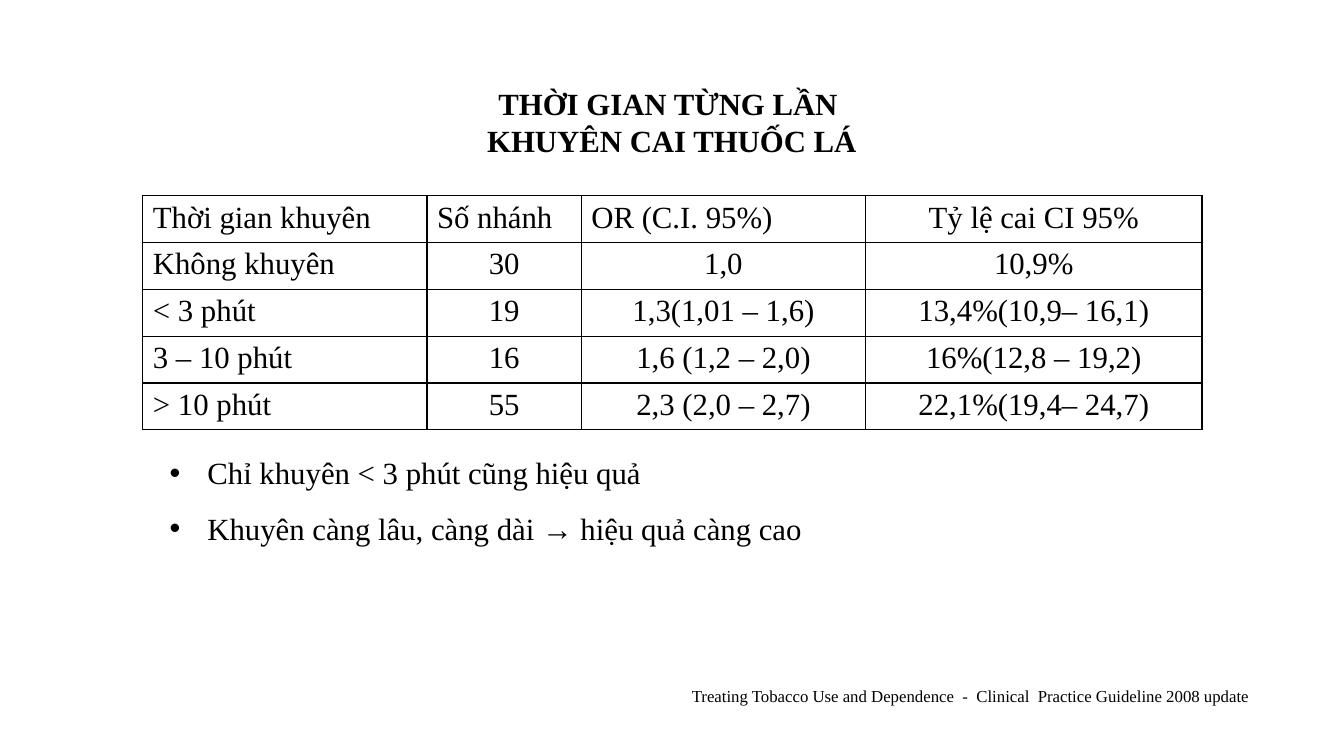
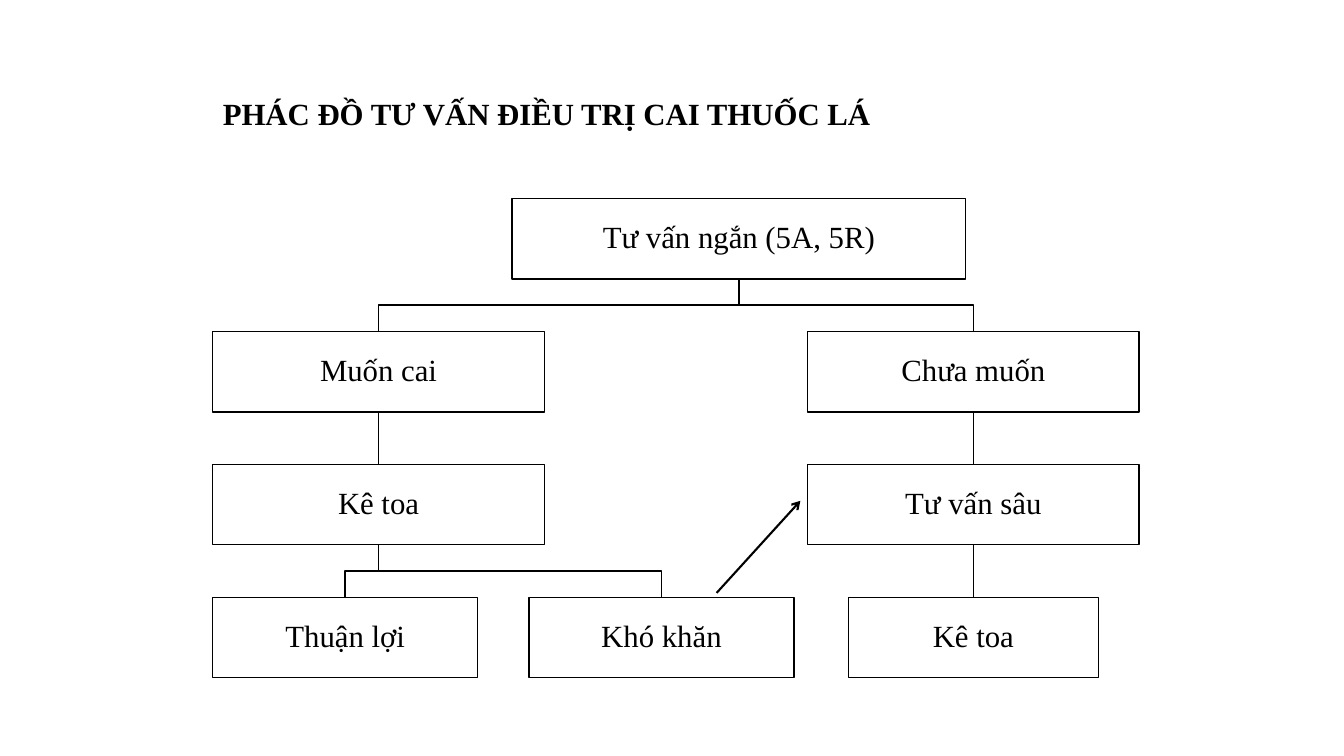
from dataclasses import dataclass

from lxml import etree
from pptx import Presentation
from pptx import util as u
from pptx.dml.color import RGBColor
from pptx.enum import shapes, text
from pptx.oxml import ns

Cm, Pt = u.Cm, u.Pt
LEFT, CENTER = text.PP_ALIGN.LEFT, text.PP_ALIGN.CENTER
RIGHT, JUSTIFY = text.PP_ALIGN.RIGHT, text.PP_ALIGN.JUSTIFY
TOP, MIDDLE = text.MSO_ANCHOR.TOP, text.MSO_ANCHOR.MIDDLE


@dataclass(frozen=True)
class Theme:
    ink: RGBColor = RGBColor(0, 0, 0)
    font: str = "Times New Roman"
    main: int = 22
    small: int = 12
    thin: float = 1
    thick: float = 1.5


class Deck:
    """Holds the style and the current slide."""

    def __init__(self, theme):
        self.theme = theme
        self.prs = Presentation()
        self.prs.slide_width, self.prs.slide_height = Cm(33.87), Cm(19.05)
        self.s = None

    def new_slide(self, layout):
        self.s = self.prs.slides.add_slide(self.prs.slide_layouts[layout])

    def fill_text(self, tf, content, align, spacing=1.0, size=None, bold=False):
        tf.text = content
        for p in tf.paragraphs:
            p.alignment, p.line_spacing = align, spacing
            p.space_before = p.space_after = Pt(0)
            for r in p.runs:
                f = r.font
                f.name, f.size, f.bold = self.theme.font, Pt(size or self.theme.main), bold
                f.color.rgb = self.theme.ink

    def place(self, sp, box, anchor):
        sp.left, sp.top, sp.width, sp.height = (Cm(v) for v in box)
        tf = sp.text_frame
        tf.word_wrap, tf.auto_size = True, text.MSO_AUTO_SIZE.NONE
        tf.vertical_anchor = anchor
        return tf

    def title(self, content, box, align, anchor, spacing=1.0):
        tf = self.place(self.s.shapes.title, box, anchor)
        self.fill_text(tf, content, align, spacing, bold=True)

    def bullets(self, items, box):
        tf = self.place(self.s.placeholders[1], box, TOP)
        self.fill_text(tf, "\n".join(items), JUSTIFY, 1.5)

    def source(self, content, box):
        sp = self.s.shapes.add_textbox(*(Cm(v) for v in box))
        self.fill_text(self.place(sp, box, TOP), content, RIGHT, size=self.theme.small)

    def border(self, cell):
        tc_pr = cell._tc.get_or_add_tcPr()
        for side in ("lnL", "lnR", "lnT", "lnB"):
            ln = etree.SubElement(tc_pr, ns.qn(f"a:{side}"), w=str(Pt(self.theme.thin)))
            fill = etree.SubElement(ln, ns.qn("a:solidFill"))
            etree.SubElement(fill, ns.qn("a:srgbClr"), val=str(self.theme.ink))

    def table(self, rows, left, top, widths, row_height):
        frame = self.s.shapes.add_table(len(rows), len(widths), Cm(left), Cm(top),
                                        Cm(sum(widths)), Cm(row_height * len(rows)))
        tbl = frame.table
        tbl.first_row = tbl.horz_banding = False
        for col, width in zip(tbl.columns, widths):
            col.width = Cm(width)
        last = len(widths) - 1
        for i, row in enumerate(rows):
            tbl.rows[i].height = Cm(row_height)
            for j, value in enumerate(row):
                cell = tbl.cell(i, j)
                centred = j == last or (i > 0 and j > 0)
                self.fill_text(cell.text_frame, value, CENTER if centred else LEFT)
                self.border(cell)
                cell.fill.background()

    def outline(self, sp, width):
        sp.line.color.rgb, sp.line.width = self.theme.ink, Pt(width)

    def box(self, content, centre, top, width, height):
        place = (centre - width / 2, top, width, height)
        sp = self.s.shapes.add_shape(shapes.MSO_SHAPE.RECTANGLE, *(Cm(v) for v in place))
        sp.shadow.inherit = False
        sp.fill.background()
        self.outline(sp, self.theme.thin)
        tf = self.place(sp, place, MIDDLE)
        tf.margin_left = tf.margin_right = tf.margin_top = tf.margin_bottom = Cm(0.05)
        self.fill_text(tf, content, CENTER, 0.9)
        return sp

    def line(self, start=(0, 0), end=(0, 0), width=None):
        c = self.s.shapes.add_connector(shapes.MSO_CONNECTOR.STRAIGHT,
                                        *(Cm(v) for v in (*start, *end)))
        self.outline(c, width or self.theme.thin)
        etree.SubElement(c._element.spPr, ns.qn("a:effectLst"))
        return c

    def arrow(self, start, end):
        c = self.line(start, end, self.theme.thick)
        etree.SubElement(c._element.spPr.get_or_add_ln(), ns.qn("a:tailEnd"), type="arrow")

    def link(self, parent, child):
        c = self.line()
        c.begin_connect(parent, 2)
        c.end_connect(child, 0)

    def branch(self, parent, child):
        x1, y1 = parent.left + parent.width // 2, parent.top + parent.height
        x2, y2 = child.left + child.width // 2, child.top
        mid = (y1 + y2) // 2
        fb = self.s.shapes.build_freeform(x1, y1)
        fb.add_line_segments([(x1, mid), (x2, mid), (x2, y2)], close=False)
        sp = fb.convert_to_shape()
        sp.shadow.inherit = False
        sp.fill.background()
        self.outline(sp, self.theme.thin)


def advice_time(d):
    d.new_slide(1)
    d.title("THỜI GIAN TỪNG LẦN \nKHUYÊN CAI THUỐC LÁ", (5.5, 2, 22.86, 2.97), CENTER, TOP)
    d.table([
        ("Thời gian khuyên", "Số nhánh", "OR (C.I. 95%)", "Tỷ lệ cai CI 95%"),
        ("Không khuyên", "30", "1,0", "10,9%"),
        ("< 3 phút", "19", "1,3(1,01 – 1,6)", "13,4%(10,9– 16,1)"),
        ("3 – 10 phút", "16", "1,6 (1,2 – 2,0)", "16%(12,8 – 19,2)"),
        ("> 10 phút", "55", "2,3 (2,0 – 2,7)", "22,1%(19,4– 24,7)"),
    ], 3.6, 4.93, (7.16, 3.89, 7.16, 8.48), 1.18)
    d.bullets(["Chỉ khuyên < 3 phút cũng hiệu quả",
               "Khuyên càng lâu, càng dài → hiệu quả càng cao"], (4.02, 10.85, 23.7, 4))
    d.source("Treating Tobacco Use and Dependence  -  Clinical  Practice Guideline 2008 update",
             (4.65, 17.15, 27.1, 0.76))


def counselling_chart(d):
    d.new_slide(5)
    d.title("PHÁC ĐỒ TƯ VẤN ĐIỀU TRỊ CAI THUỐC LÁ", (5.36, 1.07, 16.94, 3.68), LEFT, MIDDLE, 0.9)
    left, right, height = 9.54, 24.53, 2.03
    wide, narrow = 8.36, 6.68
    tops = [5 + 3.35 * i for i in range(4)]
    brief = d.box("Tư vấn ngắn (5A, 5R)", 18.62, tops[0], 11.43, height)
    ready = d.box("Muốn cai", left, tops[1], wide, height)
    unready = d.box("Chưa muốn", right, tops[1], wide, height)
    prescribe = d.box("Kê toa", left, tops[2], wide, height)
    intensive = d.box("Tư vấn sâu", right, tops[2], wide, height)
    easy = d.box("Thuận lợi", 8.7, tops[3], narrow, height)
    hard = d.box("Khó khăn", 16.67, tops[3], narrow, height)
    later = d.box("Kê toa", right, tops[3], 6.3, height)
    for parent, child in ((brief, ready), (brief, unready), (prescribe, easy), (prescribe, hard)):
        d.branch(parent, child)
    for parent, child in ((ready, prescribe), (unready, intensive), (intensive, later)):
        d.link(parent, child)
    d.arrow((18.06, 14.94), (20.17, 12.62))


def main():
    d = Deck(Theme())
    advice_time(d)
    counselling_chart(d)
    d.prs.save("out.pptx")


if __name__ == "__main__":
    main()
